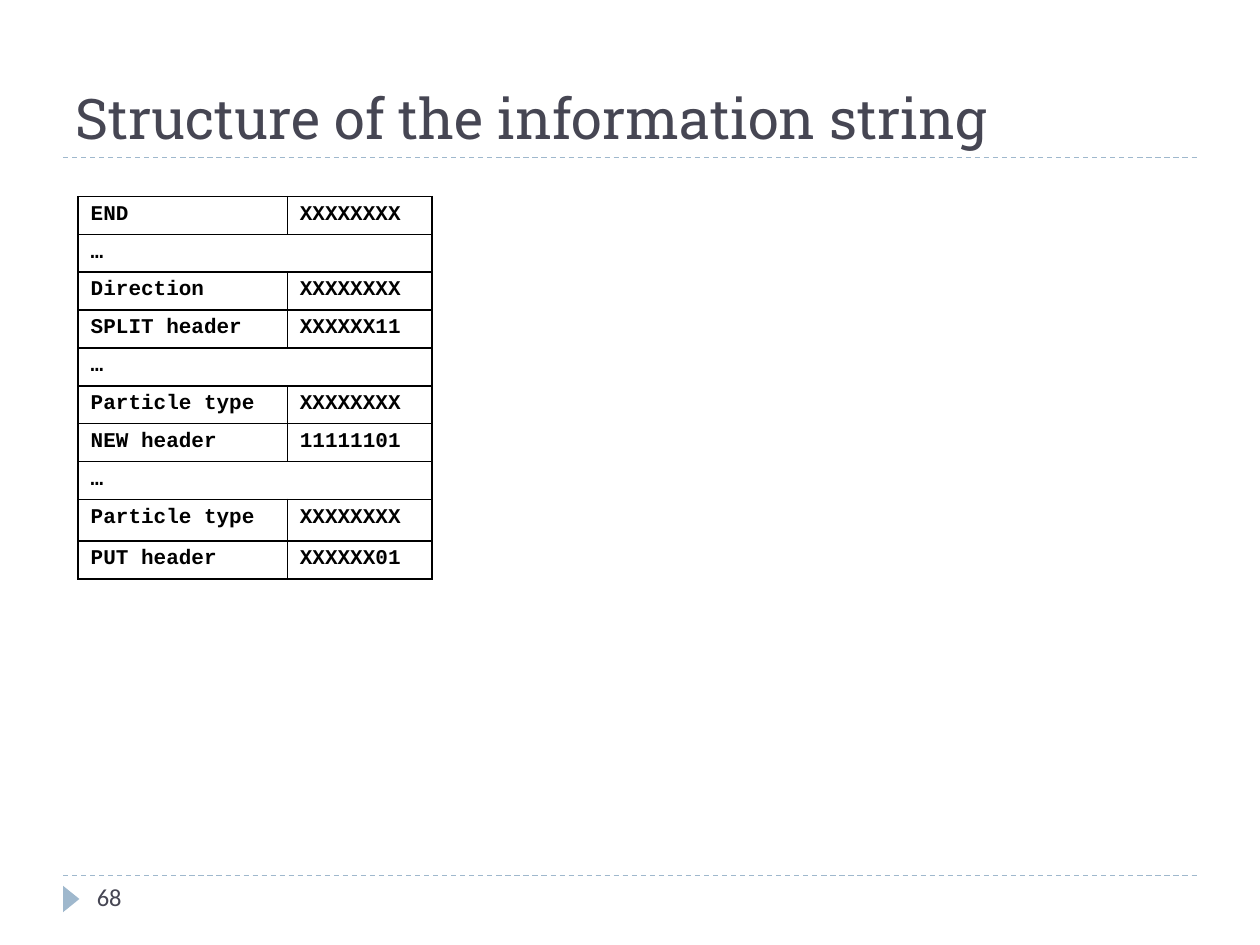
from lxml.etree import SubElement
from pptx import Presentation
from pptx.dml.color import RGBColor
from pptx.enum.dml import MSO_LINE
from pptx.enum.shapes import MSO_CONNECTOR, MSO_SHAPE
from pptx.enum.text import MSO_ANCHOR, PP_ALIGN
from pptx.oxml import parse_xml
from pptx.oxml.ns import nsdecls, qn
from pptx.util import Inches, Pt

COLORS = {"accent": "9FB8CD", "heading": "464653", "ink": "000000", "paper": "FFFFFF"}

# A row without a value spans both columns
ROWS = [
    ("END", "XXXXXXXX"),
    ("…", None),
    ("Direction", "XXXXXXXX"),
    ("SPLIT header", "XXXXXX11"),
    ("…", None),
    ("Particle type", "XXXXXXXX"),
    ("NEW header", "11111101"),
    ("…", None),
    ("Particle type", "XXXXXXXX"),
    ("PUT header", "XXXXXX01"),
]
COLUMN_WIDTHS = (1.66, 1.15)
ROW_HEIGHT = 0.29
TALL_ROW, TALL_HEIGHT = 8, 0.33


def color(name):
    return RGBColor.from_string(COLORS[name])


def write(frame, text, font_name, size, color_name, bold=False):
    frame.text = text
    para = frame.paragraphs[0]
    para.alignment = PP_ALIGN.LEFT
    para.font.name = font_name
    para.font.size = Pt(size)
    para.font.bold = bold
    para.font.color.rgb = color(color_name)


def add_rule(page, left, top, width):
    rule = page.shapes.add_connector(
        MSO_CONNECTOR.STRAIGHT, Inches(left), Inches(top), Inches(left + width), Inches(top)
    )
    rule.line.color.rgb = color("accent")
    rule.line.width = Pt(0.75)
    rule.line.dash_style = MSO_LINE.DASH
    SubElement(rule._element.spPr, qn("a:effectLst"))


def add_title(page, left, top, width, height):
    add_rule(page, left, top + height, width)
    title = page.shapes.title
    title.left, title.top = Inches(left), Inches(top)
    title.width, title.height = Inches(width), Inches(height)
    title.text_frame.vertical_anchor = MSO_ANCHOR.BOTTOM
    write(title.text_frame, "Structure of the information string", "Roboto Slab", 32, "heading")


def add_footer(page, left, top, width):
    add_rule(page, left, top, width)

    # Marker pointing at the page number
    marker = page.shapes.add_shape(
        MSO_SHAPE.ISOSCELES_TRIANGLE,
        Inches(left - 0.04), Inches(top + 0.12), Inches(0.21), Inches(0.13),
    )
    marker.rotation = 90
    marker.shadow.inherit = False
    marker.fill.solid()
    marker.fill.fore_color.rgb = color("accent")
    marker.line.fill.background()

    # Page number
    box = page.shapes.add_textbox(Inches(left + 0.17), Inches(top), Inches(2.17), Inches(0.4))
    box.text_frame.word_wrap = True
    write(box.text_frame, "68", "Calibri", 14, "heading")


def style_cell(cell):
    cell.fill.solid()
    cell.fill.fore_color.rgb = color("paper")
    properties = cell._tc.get_or_add_tcPr()
    for position, side in enumerate(("lnL", "lnR", "lnT", "lnB")):
        border = parse_xml(
            f'<a:{side} {nsdecls("a")} w="{Pt(1)}"><a:solidFill>'
            f'<a:srgbClr val="{COLORS["ink"]}"/></a:solidFill></a:{side}>'
        )
        properties.insert(position, border)


def add_string_table(page, left, top):
    heights = [TALL_HEIGHT if i == TALL_ROW else ROW_HEIGHT for i in range(len(ROWS))]
    table = page.shapes.add_table(
        len(ROWS), len(COLUMN_WIDTHS), Inches(left), Inches(top),
        Inches(sum(COLUMN_WIDTHS)), Inches(sum(heights)),
    ).table
    table.first_row = False
    table.horz_banding = False
    for column, width in zip(table.columns, COLUMN_WIDTHS):
        column.width = Inches(width)
    for index, (values, height) in enumerate(zip(ROWS, heights)):
        table.rows[index].height = Inches(height)
        for column_index, value in enumerate(values):
            cell = table.cell(index, column_index)
            style_cell(cell)
            if value is not None:
                write(cell.text_frame, value, "Courier New", 12, "ink", bold=True)
        if values[1] is None:
            table.cell(index, 0).merge(table.cell(index, 1))


def main():
    deck = Presentation()
    deck.slide_width, deck.slide_height = Inches(10), Inches(7.5)
    page = deck.slides.add_slide(deck.slide_layouts[5])
    page.background.fill.solid()
    page.background.fill.fore_color.rgb = color("paper")
    add_footer(page, 0.5, 6.95, 9)
    add_title(page, 0.5, 0.17, 9, 1.08)
    add_string_table(page, 0.62, 1.56)
    deck.save("out.pptx")


if __name__ == "__main__":
    main()
